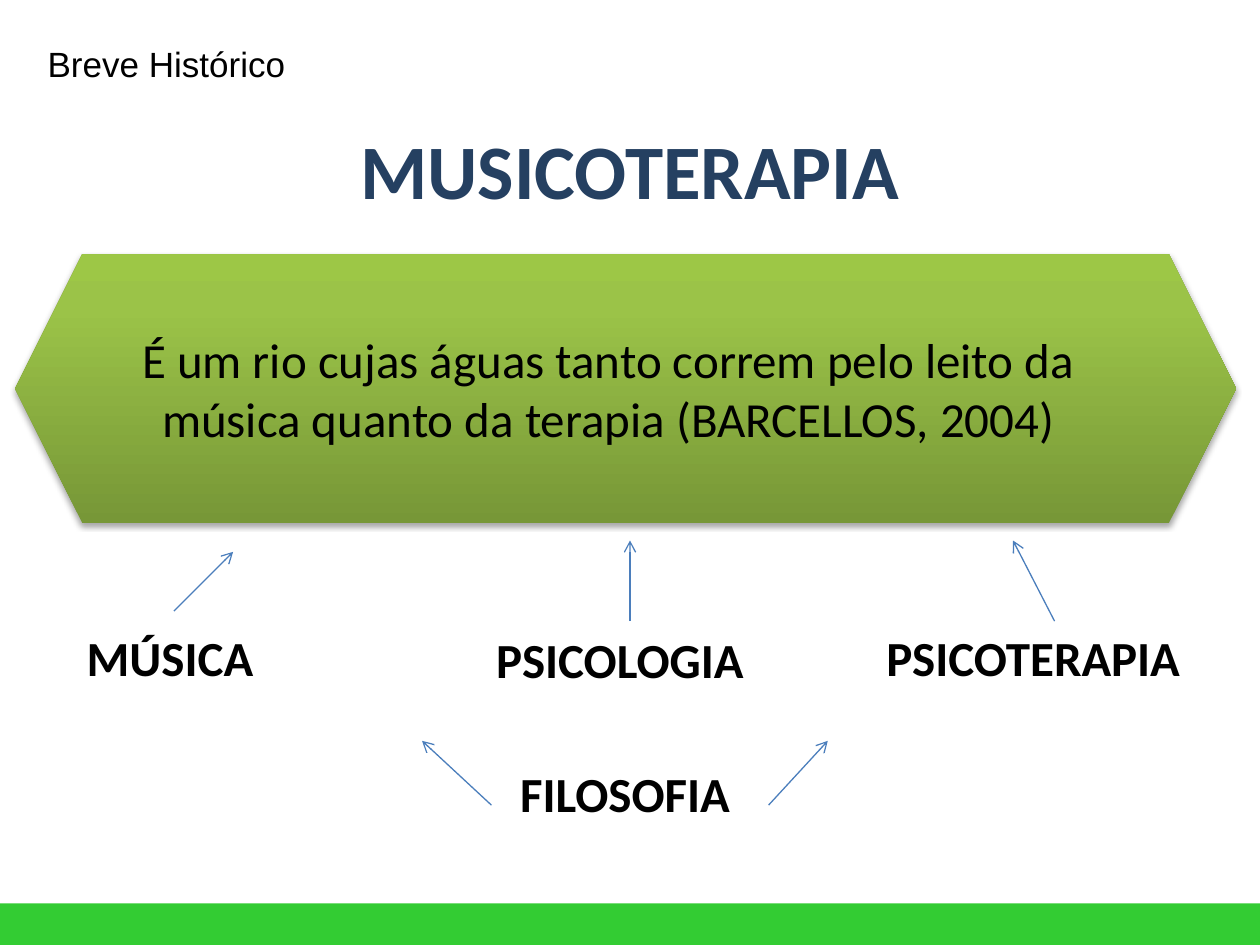
from dataclasses import dataclass

from pptx import Presentation
from pptx.dml.color import RGBColor
from pptx.enum.shapes import MSO_CONNECTOR, MSO_SHAPE
from pptx.enum.text import MSO_ANCHOR, MSO_AUTO_SIZE, PP_ALIGN
from pptx.oxml import parse_xml
from pptx.oxml.ns import nsdecls
from pptx.util import Inches, Pt


@dataclass(frozen=True)
class Theme:
    """Colours, fonts and type sizes of the slide."""
    ink: str = "000000"
    heading: str = "254061"
    arrow: str = "4B7EBC"
    footer: str = "33CC33"
    river: tuple = ((0, "779737"), (80, "9BC348"), (100, "9DC746"))
    font: str = "Calibri"
    section_font: str = "Arial"
    title_size: int = 44
    body_size: int = 28
    section_size: int = 20


def apply(target, values):
    """Set each named value on the target."""
    for name, value in values.items():
        setattr(target, name, value)


class SlideBuilder:
    """Places styled elements on a grid of 100 columns by 75 rows."""

    def __init__(self, deck, theme):
        """Add a title-only slide to the deck."""
        self.theme = theme
        self.column = deck.slide_width / 100
        self.row = deck.slide_height / 75
        self.slide = deck.slides.add_slide(deck.slide_layouts[5])

    def place(self, left, top, width, height):
        """Turn grid units into slide lengths."""
        return (round(left * self.column), round(top * self.row),
                round(width * self.column), round(height * self.row))

    def set_wording(self, holder, wording, color, align, wrap, **font):
        """Fill a text holder with one formatted paragraph."""
        frame = holder.text_frame
        apply(frame, {"text": wording, "word_wrap": wrap,
                      "vertical_anchor": MSO_ANCHOR.TOP,
                      "auto_size": MSO_AUTO_SIZE.SHAPE_TO_FIT_TEXT})
        paragraph = frame.paragraphs[0]
        paragraph.alignment = align
        letters = paragraph.runs[0].font
        apply(letters, font)
        letters.color.rgb = RGBColor.from_string(color)

    def title(self, wording, box):
        """Move and format the title placeholder."""
        heading = self.slide.shapes.title
        apply(heading, dict(zip(("left", "top", "width", "height"), self.place(*box))))
        self.set_wording(heading, wording, self.theme.heading, PP_ALIGN.CENTER, False,
                         name=self.theme.font, size=Pt(self.theme.title_size), bold=True)

    def text(self, wording, box, align=PP_ALIGN.CENTER, **changes):
        """Add a wrapped text box in the body style."""
        font = {"name": self.theme.font, "size": Pt(self.theme.body_size), "bold": False}
        holder = self.slide.shapes.add_textbox(*self.place(*box))
        self.set_wording(holder, wording, self.theme.ink, align, True, **(font | changes))

    def shape(self, preset, box):
        """Add a preset shape without outline or shadow."""
        figure = self.slide.shapes.add_shape(preset, *self.place(*box))
        figure.line.fill.background()
        figure.shadow.inherit = False
        return figure

    def river(self, box):
        """Add the hexagon with its vertical gradient and soft shadow."""
        properties = self.shape(MSO_SHAPE.HEXAGON, box)._element.spPr
        stops = "".join(f'<a:gs pos="{share * 1000}"><a:srgbClr val="{color}"/></a:gs>'
                        for share, color in self.theme.river)
        gradient = parse_xml(f'<a:gradFill {nsdecls("a")} rotWithShape="1"><a:gsLst>{stops}</a:gsLst>'
                             '<a:lin ang="16200000" scaled="0"/></a:gradFill>')
        properties.find("./{*}prstGeom").addnext(gradient)
        shadow = parse_xml(f'<a:outerShdw {nsdecls("a")} blurRad="{Pt(3.1)}" dist="{Pt(1.8)}" '
                           'dir="5400000" rotWithShape="0"><a:srgbClr val="000000">'
                           '<a:alpha val="35000"/></a:srgbClr></a:outerShdw>')
        properties.find("./{*}effectLst").append(shadow)

    def footer(self, box):
        """Add the plain band at the foot of the slide."""
        band = self.shape(MSO_SHAPE.RECTANGLE, box)
        band.fill.solid()
        band.fill.fore_color.rgb = RGBColor.from_string(self.theme.footer)

    def arrow(self, start, end):
        """Add a thin line with an open arrowhead at its end."""
        link = self.slide.shapes.add_connector(MSO_CONNECTOR.STRAIGHT, *self.place(*start, *end))
        link.line.width = Pt(0.75)
        link.line.color.rgb = RGBColor.from_string(self.theme.arrow)
        properties = link._element.spPr
        properties.find("./{*}ln").append(parse_xml(f'<a:tailEnd {nsdecls("a")} type="arrow"/>'))
        properties.append(parse_xml(f'<a:effectLst {nsdecls("a")}/>'))


def main():
    """Build the slide on music therapy and save it."""
    deck = Presentation()
    apply(deck, {"slide_width": Inches(10), "slide_height": Inches(7.5)})
    theme = Theme()
    page = SlideBuilder(deck, theme)

    page.river((1.2, 20.2, 96.9, 21.3))
    page.title("MUSICOTERAPIA", (27.4, 9.2, 45.2, 8.4))
    page.text("É um rio cujas águas tanto correm pelo leito da música quanto da terapia "
              "(BARCELLOS, 2004)", (7.3, 25.7, 81.9, 10.4))

    sources = (("MÚSICA", 5.9, 49.3, PP_ALIGN.LEFT),
               ("PSICOLOGIA", 31.5, 49.5, PP_ALIGN.CENTER),
               ("PSICOTERAPIA", 64.3, 49.3, PP_ALIGN.CENTER),
               ("FILOSOFIA", 31.9, 60.1, PP_ALIGN.CENTER))
    for field, left, top, align in sources:
        page.text(field, (left, top, 35.4, 5.7), align, bold=True)

    page.footer((0, 71.7, 100, 3.3))

    flows = (((13.8, 48.5), (18.5, 43.8)),
             ((50, 49.3), (50, 42.9)),
             ((83.7, 49.3), (80.4, 42.9)),
             ((39, 63.9), (33.5, 58.8)),
             ((61, 63.9), (65.7, 58.8)))
    for start, end in flows:
        page.arrow(start, end)

    page.text("Breve Histórico", (2.8, 2.9, 22, 4.4), PP_ALIGN.LEFT,
              name=theme.section_font, size=Pt(theme.section_size))
    deck.save("out.pptx")


if __name__ == "__main__":
    main()
